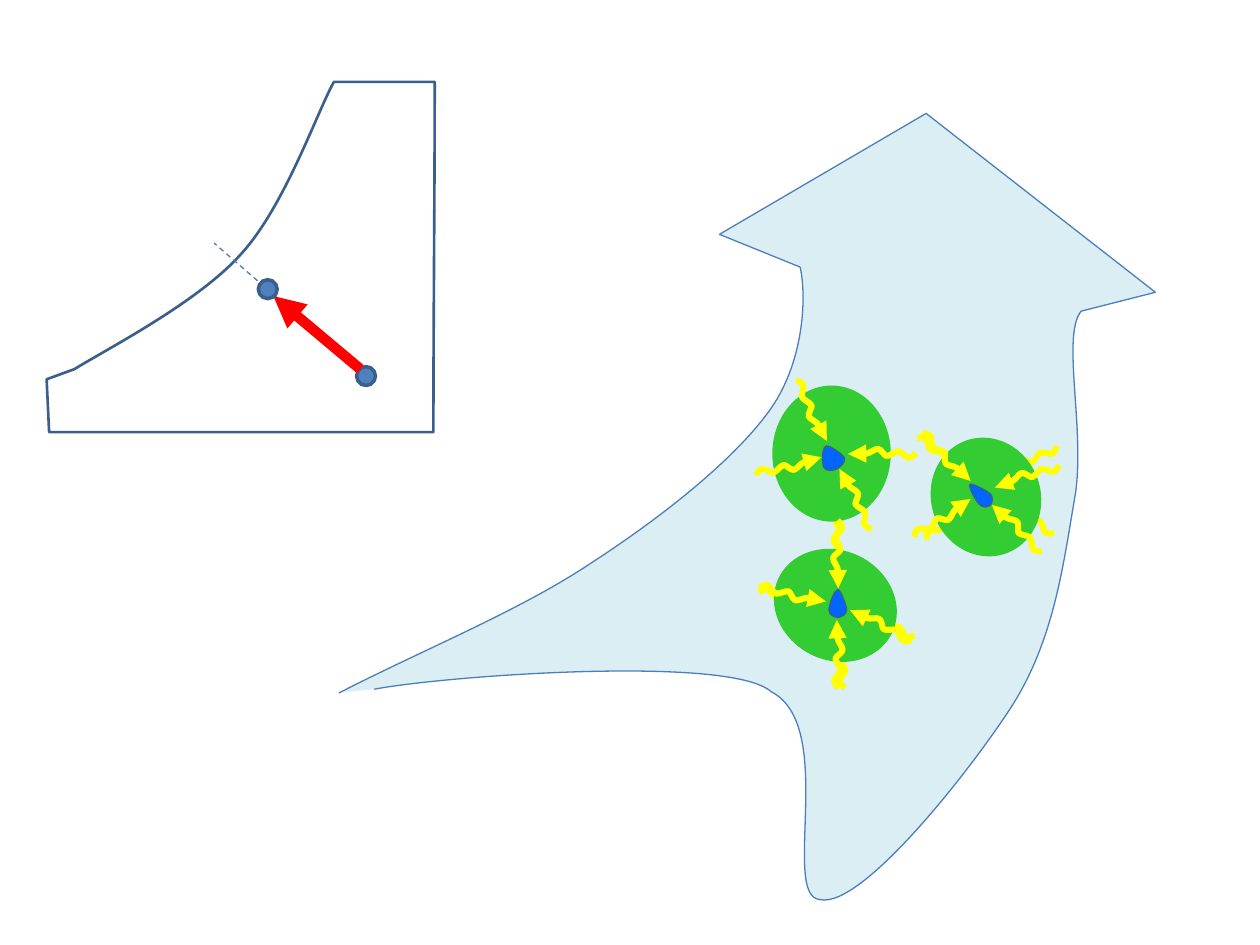
from dataclasses import dataclass
from itertools import islice

from pptx import Presentation
from pptx.dml.color import RGBColor
from pptx.enum.dml import MSO_LINE
from pptx.enum.shapes import MSO_CONNECTOR, MSO_SHAPE
from pptx.oxml.xmlchemy import OxmlElement

PX = 9144
OVAL = MSO_SHAPE.OVAL
STRAIGHT = MSO_CONNECTOR.STRAIGHT
DASH = MSO_LINE.DASH


@dataclass(frozen=True)
class Theme:
    """Colours as hex and line widths in points."""
    pale: str = "DBEEF4"
    edge: str = "4B7EBC"
    navy: str = "3A5F8C"
    steel: str = "4F81BD"
    green: str = "33CC33"
    blue: str = "0066FF"
    yellow: str = "FFFF00"
    red: str = "FF0000"
    thin: float = 0.75
    frame: float = 1.5
    ring: float = 2
    wave: float = 3.5
    bold: float = 6


THEME = Theme()

ARROW = [(269, 550),
         [(335, 516), (412, 485), (469, 447)],
         [(526, 410), (584, 364), (612, 324)],
         [(639, 285), (640, 233), (635, 212)],
         [(571, 186)], [(735, 90)], [(917, 232)], [(858, 247)],
         [(842, 267), (862, 343), (853, 395)],
         [(844, 447), (837, 506), (804, 559)],
         [(770, 612), (684, 721), (651, 714)],
         [(619, 712), (665, 576), (612, 549)],
         [(580, 520), (356, 536), (297, 547)]]
SLOPE = [(39, 343), [(344, 343)],
         [(344, 251), (345, 158), (345, 65)],
         [(265, 65)],
         [(252, 88), (226, 164), (191, 202)],
         [(157, 240), (85, 277), (59, 293)],
         [(37, 301)], [(39, 343)]]
DROP = [(7, 0),
        [(4, 0), (0, 12), (0, 16)], [(0, 20), (4, 22), (7, 22)],
        [(9, 22), (14, 20), (14, 16)], [(14, 13), (9, 0), (7, 0)]]
WAVE = [(0, 14),
        [(1, 12), (2, 10), (5, 9)], [(7, 9), (11, 12), (14, 12)],
        [(17, 11), (19, 7), (22, 6)], [(24, 6), (27, 10), (30, 10)],
        [(33, 9), (35, 5), (38, 4)], [(42, 2), (47, 1), (52, 0)]]

REAR = [
    [(789, 360, 166.3), (729, 403, 331.8), (724, 356, 49.8), (788, 401, 228.6)],
    [(675, 487, 217.5), (603, 467, 23), (638, 434, 101), (642, 512, 279.8)],
]
CELLS = [
    ((613, 306, 94, 108, 0), (651, 353, 18, 20, 334.2),
     [(674, 353, 194.4), (600, 363, 359.9), (618, 319, 78), (653, 389, 256.8)]),
    ((613, 437, 100, 87, 26.5), (658, 468, 14, 22, 0.7),
     [(673, 489, 221), (603, 465, 26.5), (639, 433, 104.5), (639, 512, 283.3)]),
    ((739, 347, 87, 95, 341.2), (772, 381, 12, 23, 315.4),
     [(789, 371, 175.6), (722, 404, 341.1), (725, 356, 59.1), (781, 412, 237.9)]),
]


def paint(shape, fill=None, line=None, width=None):
    """Set the fill and line of a shape and drop its shadow."""
    shape.shadow.inherit = False
    if fill:
        shape.fill.solid()
        shape.fill.fore_color.rgb = RGBColor.from_string(fill)
    else:
        shape.fill.background()
    stroke(shape, line, width)


def stroke(shape, line, width):
    """Set the line of a shape or connector."""
    if line:
        shape.line.color.rgb = RGBColor.from_string(line)
        shape.line.width = int(width * 12700)
    else:
        shape.line.fill.background()


def point(shape):
    """Put a triangle head at the end of a line."""
    head = OxmlElement("a:tailEnd")
    head.set("type", "triangle")
    shape._element.xpath("./p:spPr/a:ln")[0].append(head)


def trace(shapes, outline, left=0, top=0, close=False):
    """Build a freeform whose steps of three points are Bézier curves."""
    start, *steps = outline
    pen = shapes.build_freeform(*start, scale=PX)
    pen.add_line_segments([spot for step in steps for spot in step], close=close)
    form = pen.convert_to_shape(left * PX, top * PX)
    nodes = iter(form._element.xpath(".//a:lnTo"))
    for step in steps:
        lines = list(islice(nodes, len(step)))
        if len(step) == 3:
            curve = OxmlElement("a:cubicBezTo")
            lines[0].addprevious(curve)
            for node in lines:
                curve.append(node[0])
                node.getparent().remove(node)
    return form


def add_oval(shapes, left, top, wide, high, turn=0, **look):
    """Add a painted ellipse."""
    oval = shapes.add_shape(OVAL, left * PX, top * PX, wide * PX, high * PX)
    oval.rotation = turn
    paint(oval, **look)


def add_drop(shapes, left, top, wide, high, turn):
    """Add a blue drop of the given size."""
    drop = trace(shapes, DROP, left, top, close=True)
    drop.width, drop.height = wide * PX, high * PX
    drop.rotation = turn
    paint(drop, THEME.blue, THEME.navy, THEME.thin)


def add_waves(shapes, waves):
    """Add yellow wavy arrows, each turned about its centre."""
    for left, top, turn in waves:
        wave = trace(shapes, WAVE, left, top)
        wave.rotation = turn
        paint(wave, line=THEME.yellow, width=THEME.wave)
        point(wave)


def add_cell(shapes, body, core, waves):
    """Group a green cell with its drop and wavy arrows."""
    group = shapes.add_group_shape().shapes
    add_oval(group, *body, fill=THEME.green)
    add_drop(group, *core)
    add_waves(group, waves)


def add_line(shapes, start, end, color, width):
    """Add a straight line without a shadow."""
    ends = [value * PX for value in (*start, *end)]
    line = shapes.add_connector(STRAIGHT, *ends)
    line._element.spPr.append(OxmlElement("a:effectLst"))
    stroke(line, color, width)
    return line


def add_inset(shapes):
    """Add the slope with two dots and the red arrow between them."""
    slope = trace(shapes, SLOPE, close=True)
    paint(slope, line=THEME.navy, width=THEME.frame)
    look = dict(fill=THEME.steel, line=THEME.navy, width=THEME.ring)
    add_oval(shapes, 283, 291, 15, 15, **look)
    guide = add_line(shapes, (291, 298), (170, 193), THEME.edge, THEME.thin)
    guide.line.dash_style = DASH
    point(add_line(shapes, (286, 293), (217, 235), THEME.red, THEME.bold))
    add_oval(shapes, 205, 222, 15, 15, **look)


def main():
    """Build and save the slide."""
    deck = Presentation()
    deck.slide_width, deck.slide_height = 1000 * PX, 750 * PX
    shapes = deck.slides.add_slide(deck.slide_layouts[6]).shapes
    paint(trace(shapes, ARROW), THEME.pale, THEME.edge, THEME.thin)
    for waves in REAR:
        add_waves(shapes.add_group_shape().shapes, waves)
    for cell in CELLS:
        add_cell(shapes, *cell)
    add_inset(shapes)
    deck.save("out.pptx")


if __name__ == "__main__":
    main()
